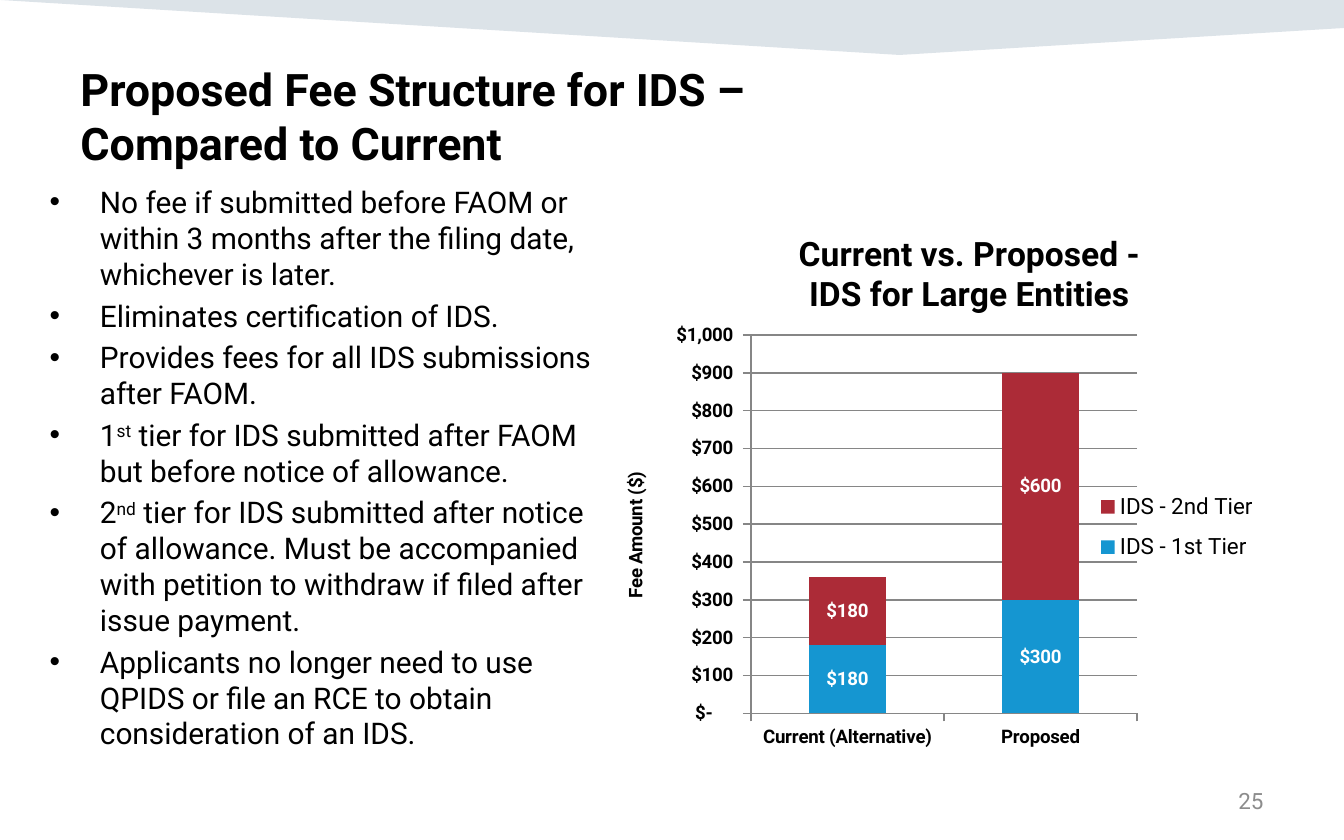
from lxml import etree
from pptx import Presentation
from pptx.chart.data import CategoryChartData
from pptx.dml.color import RGBColor
from pptx.enum.chart import XL_CHART_TYPE, XL_LABEL_POSITION, XL_LEGEND_POSITION, XL_TICK_MARK
from pptx.enum.text import MSO_ANCHOR, PP_ALIGN
from pptx.oxml.ns import qn
from pptx.util import Cm, Pt

STACK = XL_CHART_TYPE.COLUMN_STACKED
MID = XL_LABEL_POSITION.CENTER
SIDE = XL_LEGEND_POSITION.RIGHT
OUT = XL_TICK_MARK.OUTSIDE
RIGHT = PP_ALIGN.RIGHT
LEFT = PP_ALIGN.LEFT
CENTER = PP_ALIGN.CENTER
MIDDLE = MSO_ANCHOR.MIDDLE
FACE = "Roboto"
MONEY = '_("$"* #,##0_);_("$"* \\(#,##0\\);_("$"* "-"??_);_(@_)'


def hue(code):
    return RGBColor.from_string(code)


def write(para, text, size=16, color="000000", bold=False, align=LEFT):
    para.alignment = align
    for row, line in enumerate(text.split("\n")):
        if row:
            para.add_line_break()
        for turn, part in enumerate(line.split("^")):
            run = para.add_run()
            run.text = part
            font = run.font
            font.name, font.size, font.bold = FACE, Pt(size), bold
            font.color.rgb = hue(color)
            if turn % 2:
                font._element.set("baseline", "30000")


deck = Presentation()
deck.slide_width, deck.slide_height = Cm(25.4), Cm(15.88)
slide = deck.slides.add_slide(deck.slide_layouts[6])
shapes = slide.shapes

pen = shapes.build_freeform(0, 0)
pen.add_line_segments([(Cm(25.4), 0), (Cm(25.4), Cm(0.53)), (Cm(17), Cm(1.04))])
band = pen.convert_to_shape()
band.shadow.inherit = False
band.fill.solid()
band.fill.fore_color.rgb = hue("164469")
band.line.fill.background()
tint = band._element.spPr.find(qn("a:solidFill"))[0]
etree.SubElement(tint, qn("a:alpha"), val="15000")

head = shapes.add_textbox(Cm(1.27), Cm(1.04), Cm(22.86), Cm(1.3)).text_frame
head.word_wrap = True
write(head.paragraphs[0], "Proposed Fee Structure for IDS –\nCompared to Current", size=24, bold=True)

page = shapes.add_textbox(Cm(18.21), Cm(14.71), Cm(5.92), Cm(0.84)).text_frame
page.word_wrap = True
page.vertical_anchor = MIDDLE
write(page.paragraphs[0], "25", size=12, color="8C8C8C", align=RIGHT)

data = CategoryChartData(number_format=MONEY)
data.categories = ["Current (Alternative)", "Proposed"]
data.add_series("IDS - 1st Tier", [180, 300])
data.add_series("IDS - 2nd Tier", [180, 600])
chart = shapes.add_chart(STACK, Cm(11.3), Cm(3.81), Cm(13.77), Cm(10.52), data).chart
chart.font.name, chart.font.size = FACE, Pt(10)
chart.font.color.rgb = hue("000000")
title = chart.chart_title
write(title.text_frame.paragraphs[0], "Current vs. Proposed -\nIDS for Large Entities",
      size=18, bold=True, align=CENTER)

plot = chart.plots[0]
plot.gap_width, plot.overlap = 150, 100
plot.vary_by_categories = False
for tier, color in zip(plot.series, ["1596D1", "AC2B37"]):
    tier.format.fill.solid()
    tier.format.fill.fore_color.rgb = hue(color)
    tags = tier.data_labels
    tags.show_value = True
    tags.position = MID
    tags.number_format, tags.number_format_is_linked = MONEY, False
    tags.font.name, tags.font.size, tags.font.bold = FACE, Pt(10), True
    tags.font.color.rgb = hue("FFFFFF")

fees, kinds = chart.value_axis, chart.category_axis
for axis in (fees, kinds):
    axis.major_tick_mark = OUT
    axis.tick_labels.font.bold = True
    axis.tick_labels.font.size = Pt(10)
    axis.format.line.color.rgb = hue("868686")
fees.minimum_scale, fees.maximum_scale, fees.major_unit = 0, 1000, 100
fees.tick_labels.number_format = MONEY
fees.tick_labels.number_format_is_linked = False
fees.major_gridlines.format.line.color.rgb = hue("868686")
write(fees.axis_title.text_frame.paragraphs[0], "Fee Amount ($)", size=10, bold=True, align=CENTER)

key = chart.legend if chart.has_legend else None
chart.has_legend = True
key = chart.legend
key.position = SIDE
key.include_in_layout = False
key.font.name, key.font.size = FACE, Pt(12)

area = chart._chartSpace.chart.plotArea
places = [
    (title._element, 1, {"x": 0.27, "y": 0.05}),
    (fees.axis_title._element, 1, {"x": 0.03, "y": 0.48}),
    (key._element, 1, {"x": 0.67, "y": 0.5, "w": 0.25, "h": 0.17}),
    (area, 0, {"x": 0.21, "y": 0.24, "w": 0.53, "h": 0.68}),
]
for node, spot, sides in places:
    for old in node.findall(qn("c:layout")):
        node.remove(old)
    frame = etree.Element(qn("c:layout"))
    node.insert(spot, frame)
    hand = etree.SubElement(frame, qn("c:manualLayout"))
    if node is area:
        etree.SubElement(hand, qn("c:layoutTarget"), val="inner")
    for side in "xy":
        etree.SubElement(hand, qn(f"c:{side}Mode"), val="edge")
    for side, share in sides.items():
        etree.SubElement(hand, qn(f"c:{side}"), val=str(share))

points = [
    "No fee if submitted before FAOM or within 3 months after the filing date, whichever is later.",
    "Eliminates certification of IDS.",
    "Provides fees for all IDS submissions after FAOM.",
    "1^st^ tier for IDS submitted after FAOM but before notice of allowance.",
    "2^nd^ tier for IDS submitted after notice of allowance. Must be accompanied "
    "with petition to withdraw if filed after issue payment.",
    "Applicants no longer need to use QPIDS or file an RCE to obtain consideration of an IDS.",
]
body = shapes.add_textbox(Cm(0.69), Cm(3.35), Cm(10.87), Cm(12.22)).text_frame
body.word_wrap = True
for rank, point in enumerate(points):
    para = body.add_paragraph() if rank else body.paragraphs[0]
    props = para._element.get_or_add_pPr()
    props.set("marL", str(Cm(0.95)))
    props.set("indent", str(-Cm(0.95)))
    etree.SubElement(props, qn("a:buFont"), typeface="Arial")
    etree.SubElement(props, qn("a:buChar"), char="•")
    if rank:
        para.space_before = Pt(3.2)
    write(para, point)

deck.save("out.pptx")
